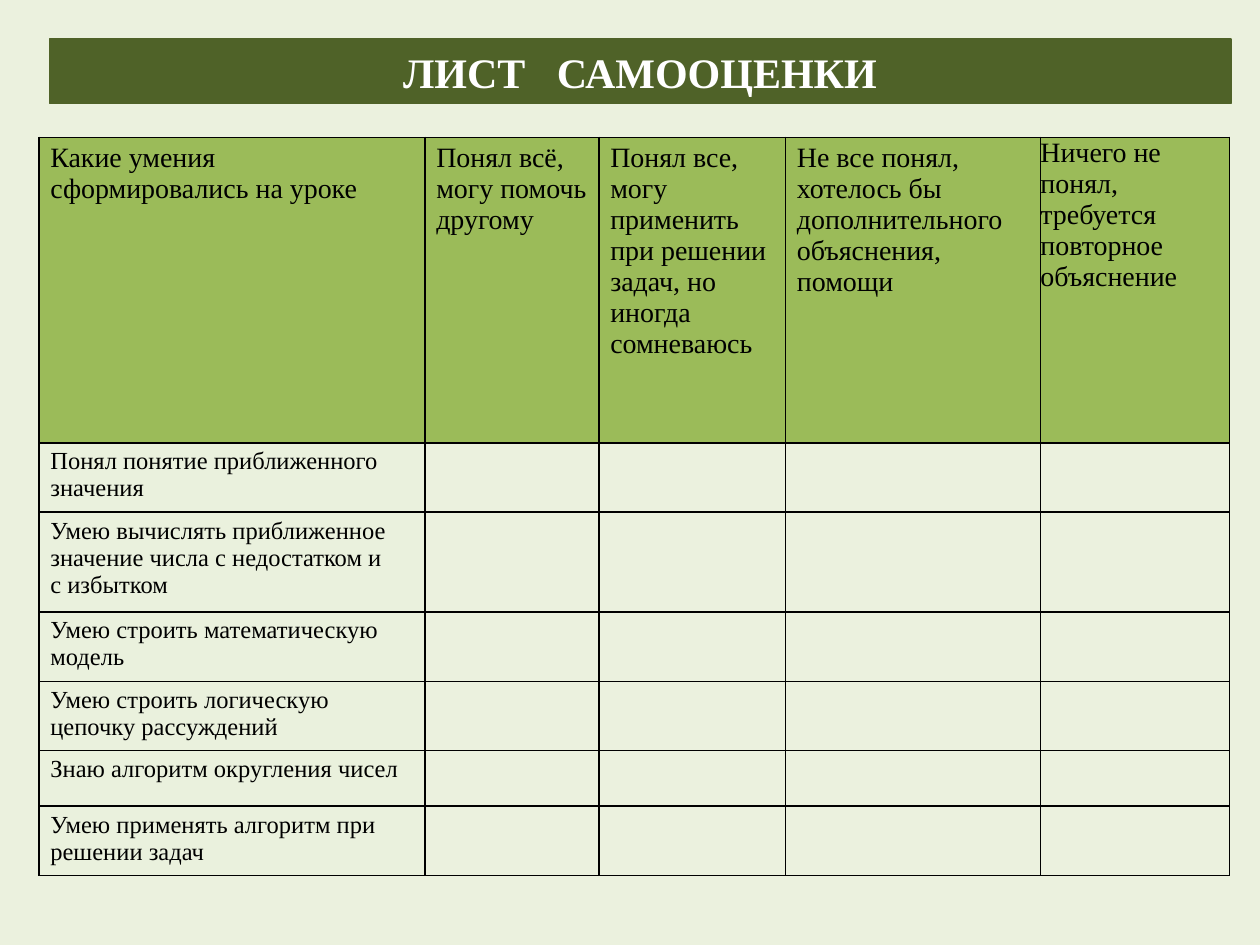
import pptx
import pptx.util
import pptx.dml.color
import pptx.enum.shapes
import pptx.enum.text
import pptx.oxml
import pptx.oxml.ns
from dataclasses import dataclass

Inches = pptx.util.Inches
Pt = pptx.util.Pt


@dataclass(frozen=True)
class Theme:
    """Colours, font and type sizes of the slide."""
    background: str = "EBF1DE"
    banner: str = "4F6228"
    header: str = "9BBB59"
    skill: str = "EAF1DD"
    ink: str = "000000"
    light: str = "FFFFFF"
    font: str = "Times New Roman"
    title_size: int = 24
    header_size: int = 16
    skill_size: int = 14


THEME = Theme()
HEADERS = [
    "Какие умения сформировались на уроке",
    "Понял всё, могу помочь другому",
    "Понял все, могу применить при решении задач, но иногда сомневаюсь",
    "Не все понял, хотелось бы дополнительного объяснения, помощи",
    "Ничего не понял, требуется повторное объяснение",
]
SKILLS = [
    "Понял понятие приближенного значения",
    "Умею вычислять приближенное значение числа с недостатком и\nс избытком",
    "Умею строить математическую модель",
    "Умею строить логическую цепочку рассуждений",
    "Знаю алгоритм округления чисел",
    "Умею применять алгоритм при решении задач",
]
COL_WIDTHS = [3.06, 1.38, 1.48, 2.02, 1.5]
ROW_HEIGHTS = [2.42, 0.55, 0.79, 0.55, 0.55, 0.44, 0.55]


def rgb(value):
    """Return a colour object for a hex string."""
    return pptx.dml.color.RGBColor.from_string(value)


def set_attrs(obj, values):
    """Set each named attribute of an object."""
    for name, value in values.items():
        setattr(obj, name, value)


def write(tf, text, size, color, bold=False):
    """Put text in a frame and format every run."""
    tf.text = text
    for p in tf.paragraphs:
        for r in p.runs:
            set_attrs(r.font, {"name": THEME.font, "size": Pt(size), "bold": bold})
            r.font.color.rgb = rgb(color)


def add_borders(cell):
    """Draw a thin line on all four sides of a cell."""
    tc_pr = cell._tc.get_or_add_tcPr()
    for i, side in enumerate("LRTB"):
        tc_pr.insert(i, pptx.oxml.parse_xml(
            f'<a:ln{side} {pptx.oxml.ns.nsdecls("a")} w="{Pt(1)}"><a:solidFill>'
            f'<a:srgbClr val="{THEME.ink}"/></a:solidFill></a:ln{side}>'))


def fill_cell(cell, text, size, fill, inset=(0.09, 0.04)):
    """Write a filled cell with the given horizontal and vertical insets."""
    x, y = map(Inches, inset)
    set_attrs(cell, {"margin_left": x, "margin_right": x, "margin_top": y, "margin_bottom": y})
    write(cell.text_frame, text, size, THEME.ink)
    cell.fill.solid()
    cell.fill.fore_color.rgb = rgb(fill)


def add_banner(slide, left, top, width, height):
    """Place the title band in its box."""
    sp = slide.shapes.add_shape(pptx.enum.shapes.MSO_SHAPE.RECTANGLE, left, top, width, height)
    sp.shadow.inherit = False
    sp.fill.solid()
    sp.fill.fore_color.rgb = rgb(THEME.banner)
    sp.line.color.rgb = rgb(THEME.banner)
    sp.line.width = Pt(0.75)
    tf = sp.text_frame
    set_attrs(tf, {"word_wrap": True, "vertical_anchor": pptx.enum.text.MSO_ANCHOR.MIDDLE})
    write(tf, "ЛИСТ   САМООЦЕНКИ", THEME.title_size, THEME.light, True)
    tf.paragraphs[0].alignment = pptx.enum.text.PP_ALIGN.CENTER


def add_assessment(slide, left, top, width, height):
    """Place the self-assessment table, scaling its grid to the box."""
    table = slide.shapes.add_table(
        len(ROW_HEIGHTS), len(COL_WIDTHS), left, top, width, height).table
    set_attrs(table, {"first_row": False, "horz_banding": False})
    for col, share in zip(table.columns, COL_WIDTHS):
        col.width = int(width * share / sum(COL_WIDTHS))
    for row, share in zip(table.rows, ROW_HEIGHTS):
        row.height = int(height * share / sum(ROW_HEIGHTS))
    for cell in table.iter_cells():
        cell.fill.background()
        add_borders(cell)
    for i, text in enumerate(HEADERS):
        inset = (0, 0) if i == len(HEADERS) - 1 else (0.09, 0.04)
        fill_cell(table.cell(0, i), text, THEME.header_size, THEME.header, inset)
    for i, text in enumerate(SKILLS, 1):
        fill_cell(table.cell(i, 0), text, THEME.skill_size, THEME.skill)


def main():
    """Build and save the slide."""
    prs = pptx.Presentation()
    set_attrs(prs, {"slide_width": Inches(10), "slide_height": Inches(7.5)})
    slide = prs.slides.add_slide(prs.slide_layouts[6])
    slide.background.fill.solid()
    slide.background.fill.fore_color.rgb = rgb(THEME.background)
    add_assessment(slide, Inches(0.31), Inches(1.09), Inches(9.45), Inches(5.86))
    add_banner(slide, Inches(0.39), Inches(0.31), Inches(9.38), Inches(0.51))
    prs.save("out.pptx")


if __name__ == "__main__":
    main()
